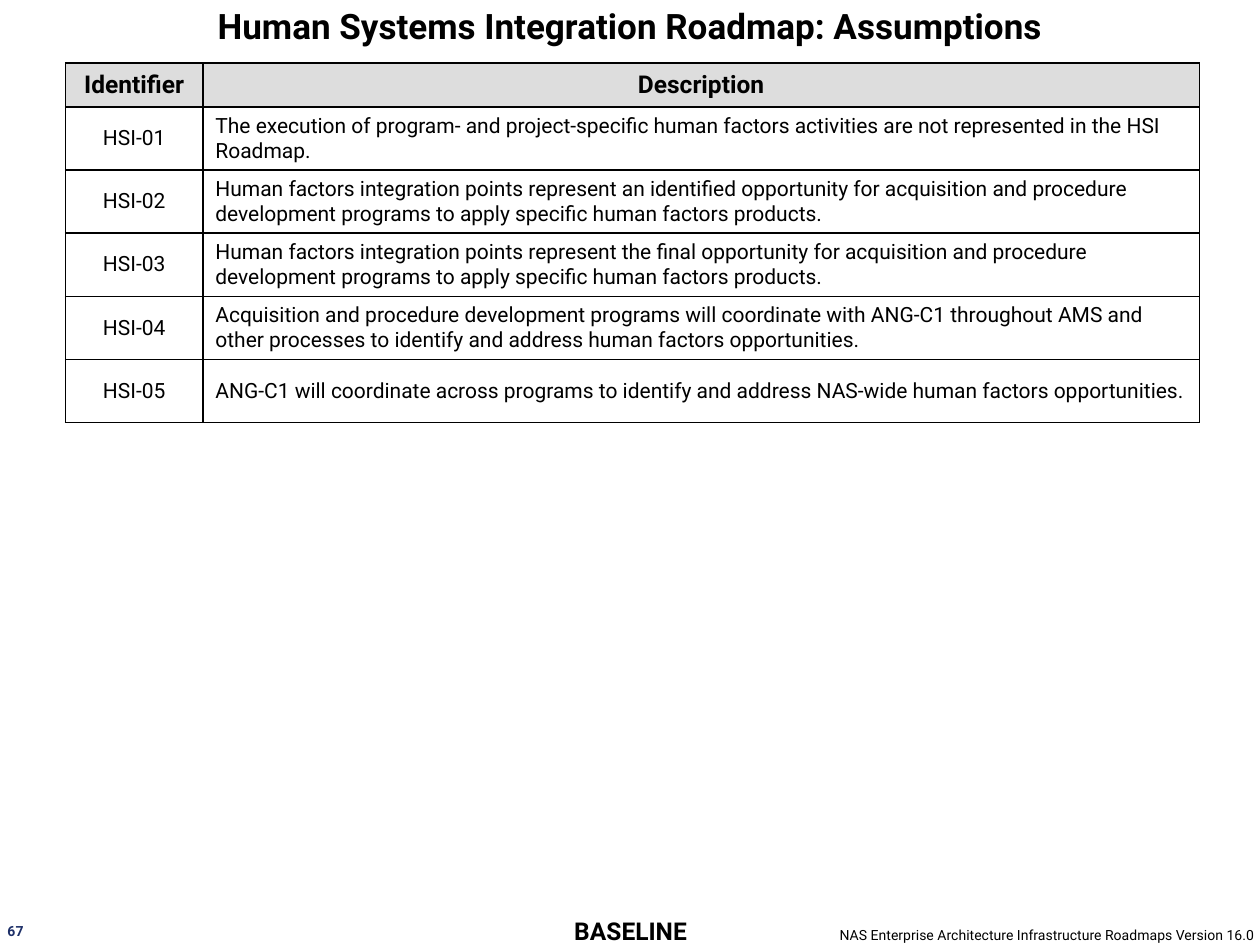
from lxml import etree
from pptx import Presentation
from pptx.dml.color import RGBColor
from pptx.enum.text import MSO_ANCHOR, MSO_AUTO_SIZE, PP_ALIGN
from pptx.oxml.ns import qn
from pptx.util import Inches, Pt

LEFT, CENTER, RIGHT = PP_ALIGN.LEFT, PP_ALIGN.CENTER, PP_ALIGN.RIGHT
TOP, MIDDLE = MSO_ANCHOR.TOP, MSO_ANCHOR.MIDDLE
NO_FIT, GROW = MSO_AUTO_SIZE.NONE, MSO_AUTO_SIZE.SHAPE_TO_FIT_TEXT

ASSUMPTIONS = [
    "The execution of program- and project-specific human factors activities are not represented in the HSI Roadmap.",
    "Human factors integration points represent an identified opportunity for acquisition and procedure "
    "development programs to apply specific human factors products.",
    "Human factors integration points represent the final opportunity for acquisition and procedure "
    "development programs to apply specific human factors products.",
    "Acquisition and procedure development programs will coordinate with ANG-C1 throughout AMS and "
    "other processes to identify and address human factors opportunities.",
    "ANG-C1 will coordinate across programs to identify and address NAS-wide human factors opportunities.",
]


def rgb(color):
    return RGBColor.from_string(color)


def write(tf, text, size=12, color="000000", bold=False, align=LEFT, font="Roboto"):
    p = tf.paragraphs[0]
    p.alignment = align
    r = p.add_run()
    r.text = text
    r.font.name = font
    r.font.size = Pt(size)
    r.font.bold = bold
    r.font.color.rgb = rgb(color)


class SlideBuilder:
    border = "000000"
    header_fill = "DDDDDD"
    body_fill = "FFFFFF"

    def __init__(self, s):
        self.s = s

    def text(self, text, x, y, w, h, anchor=TOP, insets=(0, 0), fit=GROW, wrap=True, **style):
        sp = self.s.shapes.add_textbox(Inches(x), Inches(y), Inches(w), Inches(h))
        tf = sp.text_frame
        tf.word_wrap = wrap
        tf.auto_size = fit
        tf.vertical_anchor = anchor
        tf.margin_left = tf.margin_right = Inches(insets[0])
        tf.margin_top = tf.margin_bottom = Inches(insets[1])
        write(tf, text, **style)

    def cell(self, cell, text, fill, **style):
        cell.vertical_anchor = MIDDLE
        tc_pr = cell._tc.get_or_add_tcPr()
        for side in ("lnL", "lnR", "lnT", "lnB"):
            ln = etree.SubElement(tc_pr, qn(f"a:{side}"), w=str(Pt(1)))
            solid = etree.SubElement(ln, qn("a:solidFill"))
            etree.SubElement(solid, qn("a:srgbClr"), val=self.border)
        cell.fill.solid()
        cell.fill.fore_color.rgb = rgb(fill)
        write(cell.text_frame, text, **style)

    def table(self, headers, rows, x, y, widths, header_height, row_height):
        heights = [header_height] + [row_height] * len(rows)
        table = self.s.shapes.add_table(
            len(heights), len(widths), Inches(x), Inches(y),
            Inches(sum(widths)), Inches(sum(heights))).table
        for column, width in zip(table.columns, widths):
            column.width = Inches(width)
        for row, height in zip(table.rows, heights):
            row.height = Inches(height)
        for j, header in enumerate(headers):
            self.cell(table.cell(0, j), header, self.header_fill, size=14, bold=True, align=CENTER)
        for i, row in enumerate(rows, 1):
            for j, (value, align) in enumerate(zip(row, (CENTER, LEFT))):
                self.cell(table.cell(i, j), value, self.body_fill, align=align)


def main():
    prs = Presentation()
    prs.slide_width, prs.slide_height = Inches(10), Inches(7.5)
    slide = SlideBuilder(prs.slides.add_slide(prs.slide_layouts[6]))
    slide.text("NAS Enterprise Architecture Infrastructure Roadmaps Version 16.0",
               6.3, 7.35, 3.68, 0.13, insets=(0.02, 0), size=8, align=RIGHT)
    slide.text("BASELINE", 4.23, 7.27, 1.55, 0.24, anchor=MIDDLE, size=14, bold=True, align=CENTER)
    rows = [(f"HSI-{n:02d}", text) for n, text in enumerate(ASSUMPTIONS, 1)]
    slide.table(("Identifier", "Description"), rows, 0.52, 0.5, (1.09, 7.91), 0.35, 0.5)
    slide.text("Human Systems Integration Roadmap: Assumptions", 0, 0, 10, 0.4, anchor=MIDDLE,
               insets=(0.1, 0.05), fit=NO_FIT, size=20, bold=True, align=CENTER)
    slide.text("67", 0.06, 7.32, 0.14, 0.13, wrap=False, size=8, color="1D2F68", bold=True)
    prs.save("out.pptx")


if __name__ == "__main__":
    main()
